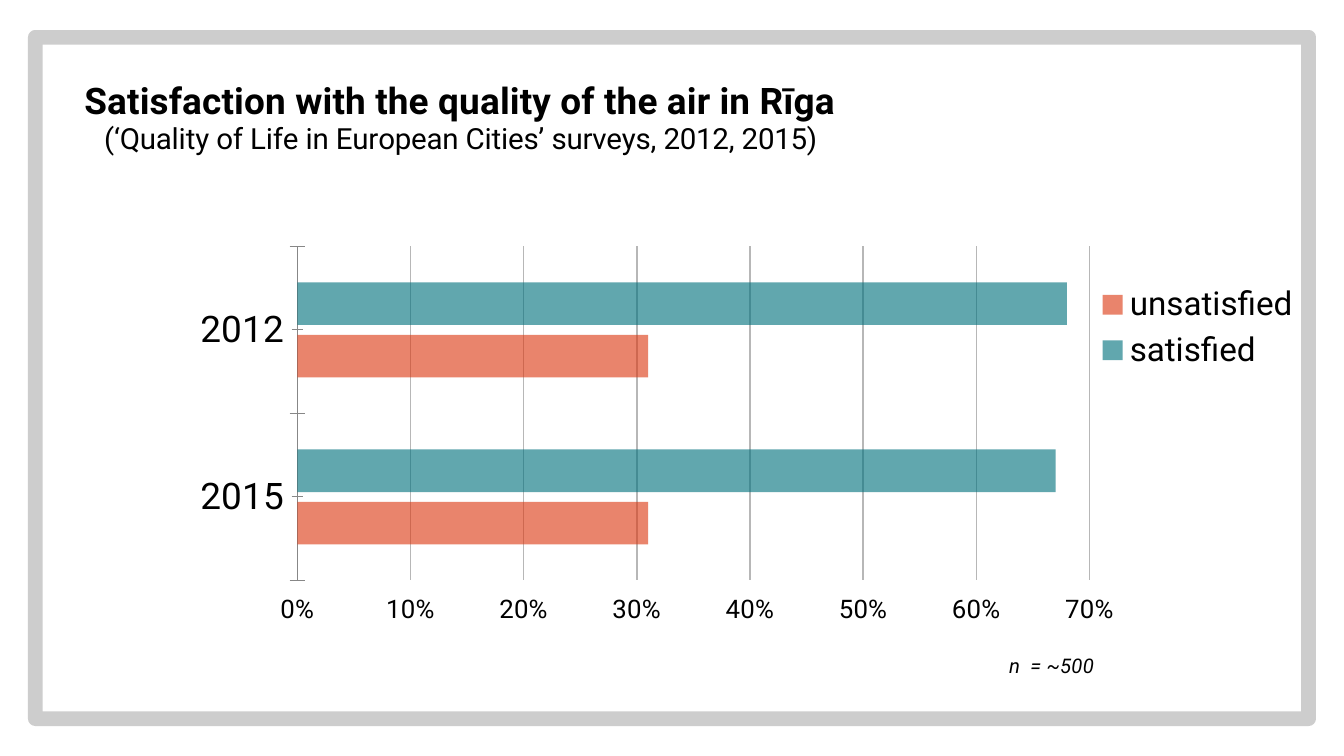
from pptx import Presentation
from pptx.chart.data import CategoryChartData
from pptx.dml.color import RGBColor
from pptx.enum.chart import XL_AXIS_CROSSES as Crosses
from pptx.enum.chart import XL_CHART_TYPE as ChartType
from pptx.enum.chart import XL_LEGEND_POSITION as LegendPosition
from pptx.enum.chart import XL_TICK_LABEL_POSITION as LabelPosition
from pptx.enum.chart import XL_TICK_MARK as TickMark
from pptx.enum.text import PP_ALIGN as Align
from pptx.oxml import parse_xml
from pptx.oxml.ns import nsdecls, qn
from pptx.util import Pt

PX = 914400 / 134.4
FONT = "Roboto"
BLACK, GRID, AXIS, FRAME = "000000", "B7B7B7", "878787", "B2B2B2"
FRAME_PX = 15
SERIES = [
    ("satisfied", (0.68, 0.67), "00717D"),
    ("unsatisfied", (0.31, 0.31), "DC3912"),
]


def px(length):
    return round(length * PX)


def color(value):
    return RGBColor.from_string(value)


def style_font(font, size, bold=False, italic=False):
    font.name = FONT
    font.size = Pt(size)
    font.bold = bold
    font.italic = italic
    font.color.rgb = color(BLACK)


def style_line(line, value, width=0.75):
    line.color.rgb = color(value)
    line.width = Pt(width)


def add_span(para, text, size, bold=False, italic=False):
    span = para.add_run()
    span.text = text
    style_font(span.font, size, bold, italic)


def set_alpha(properties, percent):
    for fill in properties.iter(qn("a:srgbClr")):
        fill.append(parse_xml(f'<a:alpha {nsdecls("a")} val="{percent * 1000}"/>'))


def set_layout(element, area, after=None, inner=False, **lengths):
    """Place a chart part by px lengths inside the framed area."""
    for old in element.findall(qn("c:layout")):
        element.remove(old)
    whole = {"x": area[0], "y": area[1], "w": area[0], "h": area[1]}
    target = '<c:layoutTarget val="inner"/>' if inner else ""
    modes = "".join(f'<c:{key}Mode val="edge"/>' for key in "xy")
    sizes = "".join(
        f'<c:{key} val="{length / whole[key]}"/>' for key, length in lengths.items()
    )
    layout = parse_xml(
        f'<c:layout {nsdecls("c")}><c:manualLayout>'
        f"{target}{modes}{sizes}</c:manualLayout></c:layout>"
    )
    if after:
        element.find(qn(after)).addnext(layout)
    else:
        element.insert(0, layout)


def add_frame(chart):
    frame = parse_xml(
        f'<c:spPr {nsdecls("c", "a")}><a:noFill/><a:ln w="{Pt(8)}"><a:solidFill>'
        f'<a:srgbClr val="{FRAME}"/></a:solidFill><a:round/></a:ln></c:spPr>'
    )
    set_alpha(frame, 64)
    chart.element.find(qn("c:chart")).addnext(frame)


def add_title(chart, area):
    chart.has_title = True
    title = chart.chart_title
    heading = title.text_frame.paragraphs[0]
    add_span(heading, "Satisfaction with the quality of the air in Rīga", 20, bold=True)
    subtitle = title.text_frame.add_paragraph()
    add_span(subtitle, "(‘Quality of Life in European Cities’ surveys, 2012, 2015)", 16)
    for para in (heading, subtitle):
        para.alignment = Align.CENTER
    set_layout(title._element, area, after="c:tx", x=45, y=36)


def style_axes(chart, area):
    years = chart.category_axis
    years.reverse_order = True
    years.crosses = Crosses.MAXIMUM
    years.major_tick_mark = years.minor_tick_mark = TickMark.CROSS
    style_font(years.tick_labels.font, 20)
    style_line(years.format.line, AXIS, 0.5)

    shares = chart.value_axis
    shares.minimum_scale, shares.maximum_scale, shares.major_unit = 0, 0.7, 0.1
    shares.major_tick_mark = TickMark.CROSS
    shares.tick_label_position = LabelPosition.HIGH
    shares.format.line.fill.background()
    style_line(shares.major_gridlines.format.line, GRID)
    style_font(shares.tick_labels.font, 14)
    shares.tick_labels.number_format = "0%"
    shares.tick_labels.number_format_is_linked = False
    shares.has_title = True
    note = shares.axis_title
    add_span(note.text_frame.paragraphs[0], "n  = ~500", 11, italic=True)
    set_layout(note._element, area, after="c:tx", x=970, y=611)


def style_bars(chart, area):
    plot = chart.plots[0]
    plot.gap_width = 169
    plot.overlap = -23
    plot.vary_by_categories = False
    for series, (_, _, value) in zip(plot.series, SERIES):
        series.invert_if_negative = False
        series.format.fill.solid()
        series.format.fill.fore_color.rgb = color(value)
        set_alpha(series.format.fill._xPr, 62)
    plot_area = chart.element.find(qn("c:chart")).find(qn("c:plotArea"))
    set_layout(plot_area, area, inner=True, x=262, y=209, w=792, h=334)


def add_legend(chart, area):
    chart.has_legend = True
    legend = chart.legend
    legend.position = LegendPosition.RIGHT
    legend.include_in_layout = False
    style_font(legend.font, 18)
    set_layout(legend._element, area, after="c:legendPos", x=1060, y=241, w=204, h=98)


def add_survey_chart(page, left, top, width, height):
    data = CategoryChartData(number_format="0%")
    data.categories = ["2012", "2015"]
    for name, values, _ in SERIES:
        data.add_series(name, values)
    box = page.shapes.add_chart(
        ChartType.BAR_CLUSTERED, px(left), px(top), px(width), px(height), data
    )
    chart = box.chart
    area = (width - FRAME_PX, height - FRAME_PX)
    style_font(chart.font, 10)
    add_frame(chart)
    for add_part in (add_title, style_axes, style_bars, add_legend):
        add_part(chart, area)


def main():
    deck = Presentation()
    deck.slide_width, deck.slide_height = px(1344), px(756)
    page = deck.slides.add_slide(deck.slide_layouts[6])
    add_survey_chart(page, 28, 30, 1288, 696)
    deck.save("out.pptx")


if __name__ == "__main__":
    main()
